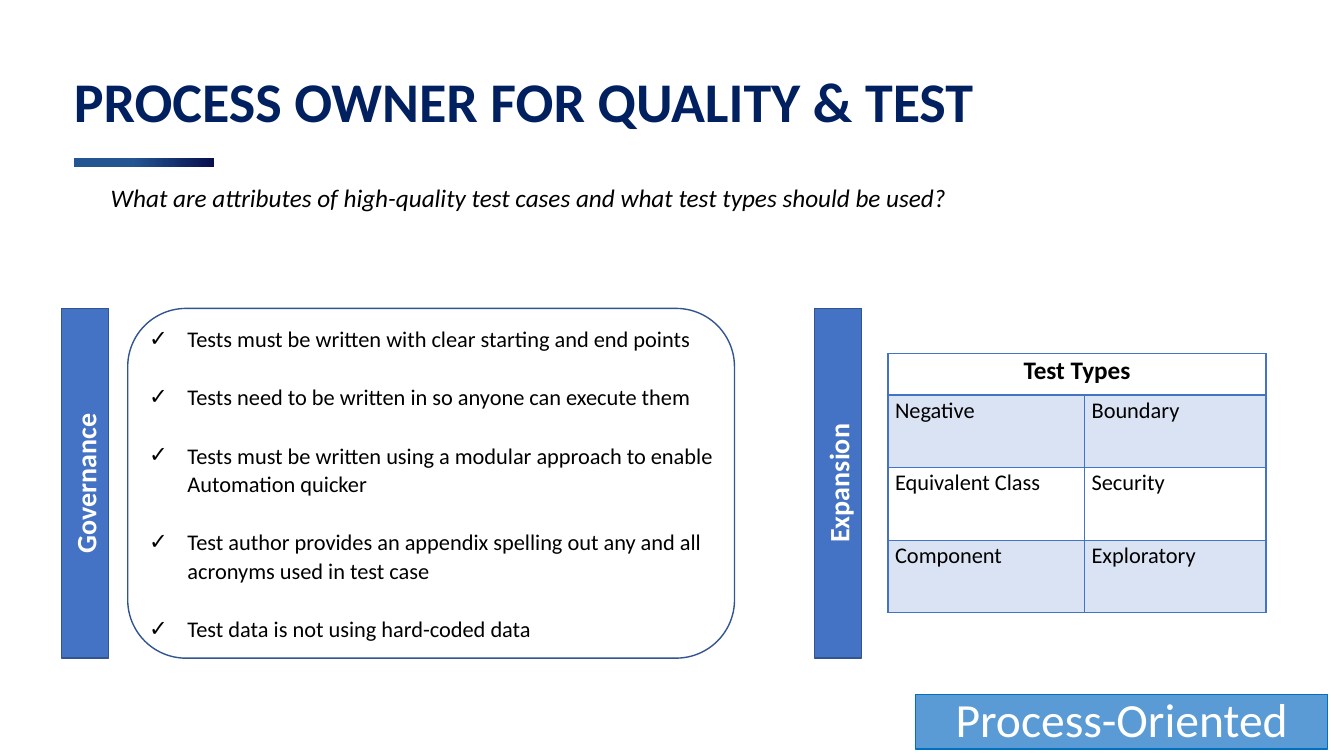
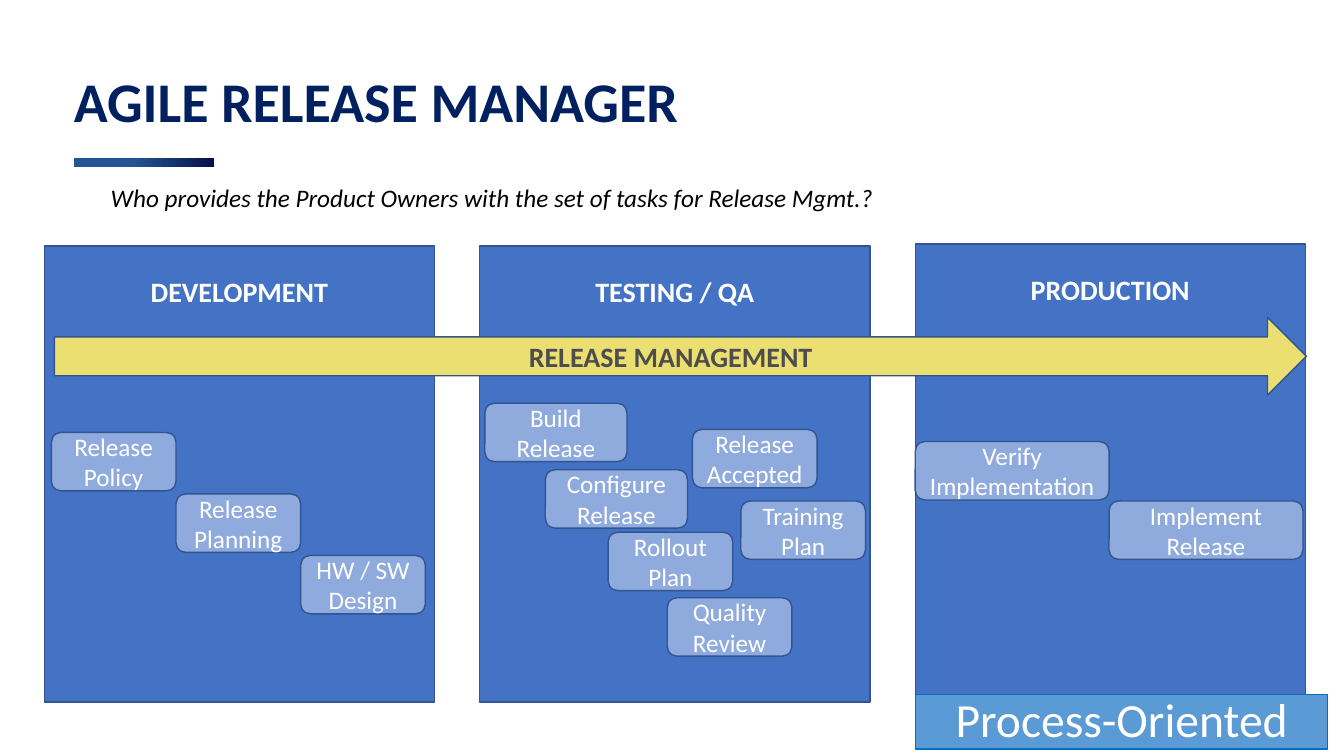
from lxml.etree import SubElement
from pptx import Presentation
from pptx.dml.color import RGBColor
from pptx.enum.shapes import MSO_SHAPE
from pptx.enum.text import MSO_ANCHOR, MSO_AUTO_SIZE, PP_ALIGN
from pptx.oxml.ns import qn
from pptx.util import Inches, Pt

FONT = "Calibri"
BLACK = RGBColor(0x00, 0x00, 0x00)
WHITE = RGBColor(0xFF, 0xFF, 0xFF)
NAVY = RGBColor(0x00, 0x20, 0x60)
BAR_START = RGBColor(0x23, 0x55, 0x92)
BAR_END = RGBColor(0x06, 0x10, 0x4D)
BLUE = RGBColor(0x44, 0x72, 0xC4)
OUTLINE = RGBColor(0x32, 0x54, 0x91)
TASK_BLUE = RGBColor(0x8F, 0xAA, 0xDC)
PALE_BLUE = RGBColor(0xDA, 0xE3, 0xF3)
TAG_BLUE = RGBColor(0x5B, 0x9B, 0xD5)
TAG_LINE = RGBColor(0x00, 0x70, 0xC0)
YELLOW = RGBColor(0xEB, 0xDF, 0x71)
GREY = RGBColor(0x4D, 0x4D, 0x4D)

presentation = Presentation()
presentation.slide_width = Inches(13.33)
presentation.slide_height = Inches(7.5)
COLUMN = presentation.slide_width / 40
ROW = presentation.slide_height / 30


def cells(left, top, width, height):
    return [round(left * COLUMN), round(top * ROW), round(width * COLUMN), round(height * ROW)]


def write(frame, text, size=18, color=WHITE, bold=False, italic=False, align=PP_ALIGN.CENTER,
          anchor=MSO_ANCHOR.MIDDLE, spacing=1.0, gap=0, bullet=None, vertical=False, top_inset=0.05):
    frame.word_wrap = True
    frame.auto_size = MSO_AUTO_SIZE.NONE
    frame.vertical_anchor = anchor
    frame.margin_top = Inches(top_inset)
    if vertical:
        frame._txBody.bodyPr.set("vert", "vert270")
    for index, line in enumerate(text.split("\n")):
        paragraph = frame.add_paragraph() if index else frame.paragraphs[0]
        if bullet:
            properties = paragraph._p.get_or_add_pPr()
            properties.set("marL", str(Inches(0.38)))
            properties.set("indent", str(-Inches(0.38)))
            SubElement(properties, qn("a:buChar")).set("char", bullet)
        paragraph.alignment = align
        paragraph.line_spacing = spacing
        paragraph.space_before = Pt(gap if index else 0)
        run = paragraph.add_run()
        run.text = line
        run.font.name = FONT
        run.font.size = Pt(size)
        run.font.bold = bold
        run.font.italic = italic
        run.font.color.rgb = color


BAND = dict(size=20, bold=True, vertical=True)
HEADING = dict(size=20, bold=True, anchor=MSO_ANCHOR.TOP, top_inset=0.28)
TAG = (MSO_SHAPE.RECTANGLE, (27.25, 27.56, 12.27, 2.16), TAG_BLUE, TAG_LINE,
       "Process-Oriented", dict(size=34, spacing=0.9))

quality_blocks = [
    (MSO_SHAPE.ROUNDED_RECTANGLE, (3.8, 12.24, 18.06, 13.88), None, OUTLINE, "", {}),
    (MSO_SHAPE.RECTANGLE, (1.83, 12.24, 1.41, 13.88), BLUE, OUTLINE, "Governance", BAND),
    (MSO_SHAPE.RECTANGLE, (24.24, 12.24, 1.41, 13.88), BLUE, OUTLINE, "Expansion", BAND),
]

release_blocks = []
panels = [("DEVELOPMENT", 9.76), ("TESTING / QA", 9.76), ("PRODUCTION", 9.68)]
for index, (name, top) in enumerate(panels):
    frame = (1.32 + 12.96 * index, top, 11.61, 27.86 - top)
    release_blocks.append((MSO_SHAPE.RECTANGLE, frame, BLUE, OUTLINE, name, HEADING))

tasks = [(name, 1.53 + 3.71 * step, 17.16 + 2.44 * step, 3.71)
         for step, name in enumerate(["Release Policy", "Release Planning", "HW / SW Design"])]
tasks += [
    ("Build Release", 14.43, 16, 4.23),
    ("Configure Release", 16.23, 18.64, 4.23),
    ("Rollout Plan", 18.1, 21.12, 3.71),
    ("Quality Review", 19.86, 23.72, 3.71),
    ("Release Accepted", 20.61, 17.04, 3.71),
    ("Training Plan", 22.05, 19.88, 3.71),
    ("Verify Implementation", 27.24, 17.52, 5.77),
    ("Implement Release", 33.01, 19.88, 5.77),
]
for name, left, top, width in tasks:
    release_blocks.append((MSO_SHAPE.ROUNDED_RECTANGLE, (left, top, width, 2.32),
                           TASK_BLUE, OUTLINE, name, {}))
release_blocks.append((MSO_SHAPE.RIGHT_ARROW, (1.62, 12.6, 37.26, 3.08), YELLOW, OUTLINE,
                       "RELEASE MANAGEMENT", dict(size=20, bold=True, color=GREY)))

contents = [
    (1, "PROCESS OWNER FOR QUALITY & TEST",
     "What are attributes of high-quality test cases and what test types should be used?",
     quality_blocks),
    (5, "AGILE RELEASE MANAGER",
     "Who provides the Product Owners with the set of tasks for Release Mgmt.?",
     release_blocks),
]
for layout, heading, question, blocks in contents:
    slide = presentation.slides.add_slide(presentation.slide_layouts[layout])
    title = slide.shapes.title
    title.left, title.top, title.width, title.height = cells(1.9, 1.68, 28.1, 5.08)
    write(title.text_frame, heading, size=40, color=NAVY, bold=True,
          align=PP_ALIGN.LEFT, spacing=0.8)

    bar = slide.shapes.add_shape(MSO_SHAPE.RECTANGLE, *cells(2.2, 6.28, 4.17, 0.36))
    bar.shadow.inherit = False
    bar.line.fill.background()
    bar.fill.gradient()
    bar.fill.gradient_angle = 0
    for stop, color, position in zip(bar.fill.gradient_stops, (BAR_START, BAR_END), (0.42, 1)):
        stop.color.rgb = color
        stop.position = position

    subtitle = slide.shapes.add_textbox(*cells(3, 7.16, 35.5, 1.48))
    write(subtitle.text_frame, question, color=BLACK, italic=True,
          align=PP_ALIGN.LEFT, anchor=MSO_ANCHOR.TOP, spacing=0.9)

    for preset, frame, fill, line, text, text_format in blocks + [TAG]:
        shape = slide.shapes.add_shape(preset, *cells(*frame))
        shape.shadow.inherit = False
        if fill is None:
            shape.fill.background()
        else:
            shape.fill.solid()
            shape.fill.fore_color.rgb = fill
        shape.line.color.rgb = line
        shape.line.width = Pt(1)
        if text:
            write(shape.text_frame, text, **text_format)

quality_slide = presentation.slides[0]
checklist = quality_slide.placeholders[1]
checklist.left, checklist.top, checklist.width, checklist.height = cells(4.14, 12.64, 18, 13.08)
rules = [
    "Tests must be written with clear starting and end points",
    "Tests need to be written in so anyone can execute them",
    "Tests must be written using a modular approach to enable Automation quicker",
    "Test author provides an appendix spelling out any and all acronyms used in test case",
    "Test data is not using hard-coded data",
]
write(checklist.text_frame, "\n".join(rules), size=16, color=BLACK, align=PP_ALIGN.LEFT,
      anchor=MSO_ANCHOR.TOP, spacing=1.07, gap=21, bullet="✓")

test_types = [
    ("Test Types", ""),
    ("Negative", "Boundary"),
    ("Equivalent Class", "Security"),
    ("Component", "Exploratory"),
]
table = quality_slide.shapes.add_table(4, 2, *cells(26.43, 14.04, 11.25, 10.28)).table
for column, width in zip(table.columns, (5.85, 5.4)):
    column.width = round(width * COLUMN)
for row, height in zip(table.rows, (1.64, 2.88, 2.88, 2.88)):
    row.height = round(height * ROW)
table.cell(0, 0).merge(table.cell(0, 1))
for row_index, names in enumerate(test_types):
    is_header = row_index == 0
    for column_index, name in enumerate(names):
        cell = table.cell(row_index, column_index)
        if name:
            write(cell.text_frame, name, size=18 if is_header else 16, color=BLACK,
                  bold=is_header, align=PP_ALIGN.CENTER if is_header else PP_ALIGN.LEFT,
                  anchor=MSO_ANCHOR.TOP, spacing=1.07)
        cell.vertical_anchor = MSO_ANCHOR.TOP
        cell.margin_left = cell.margin_right = Inches(0.07)
        cell.margin_top = cell.margin_bottom = 0
        properties = cell._tc.get_or_add_tcPr()
        for side in ("lnL", "lnR", "lnT", "lnB"):
            border = SubElement(properties, qn("a:" + side))
            border.set("w", str(Pt(2 if is_header and side == "lnB" else 1)))
            border_fill = SubElement(border, qn("a:solidFill"))
            SubElement(border_fill, qn("a:srgbClr")).set("val", str(BLUE))
        if row_index % 2:
            cell.fill.solid()
            cell.fill.fore_color.rgb = PALE_BLUE
        else:
            cell.fill.background()

presentation.save("out.pptx")
